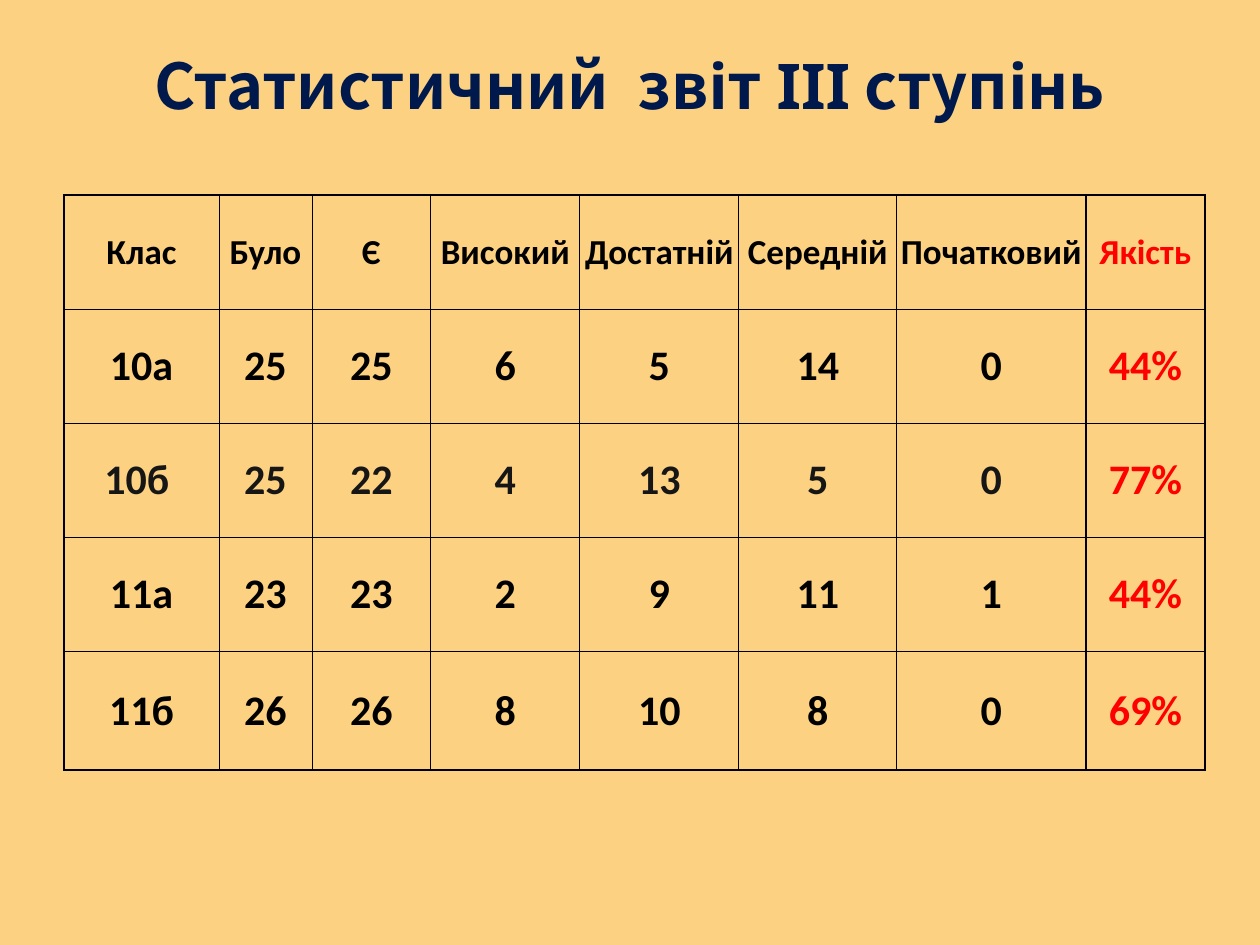
from lxml.etree import SubElement
from pptx import Presentation
from pptx.dml.color import RGBColor
from pptx.enum.text import MSO_ANCHOR, PP_ALIGN
from pptx.oxml.ns import qn
from pptx.util import Emu, Pt

COLORS = {
    "background": "FCD181",
    "title": "00194C",
    "text": "000000",
    "soft": "161616",
    "quality": "FF0000",
    "border": "000000",
}
COLUMNS = [155, 93, 119, 149, 159, 158, 189, 119]
ROWS = [114, 114, 114, 114, 119]
RESULTS = [
    ["Клас", "Було", "Є", "Високий", "Достатній", "Середній", "Початковий", "Якість"],
    ["10а", "25", "25", "6", "5", "14", "0", "44%"],
    ["10б ", "25", "22", "4", "13", "5", "0", "77%"],
    ["11а", "23", "23", "2", "9", "11", "1", "44%"],
    ["11б", "26", "26", "8", "10", "8", "0", "69%"],
]
SOFT_ROW = 2


def px(n):
    return Emu(round(n * 914400 / 126))


def write(tf, text, size=24, color="text", font="Calibri", bold=True):
    p = tf.paragraphs[0]
    p.alignment = PP_ALIGN.CENTER
    r = p.add_run()
    r.text = text
    r.font.size = Pt(size)
    r.font.name = font
    r.font.bold = bold
    r.font.color.rgb = RGBColor.from_string(COLORS[color])
    for tag in ("a:ea", "a:cs"):
        SubElement(r.font._element, qn(tag), typeface=font)


class ReportSlide:
    """Draws the elements of a report slide in one shared style."""

    def __init__(self, prs):
        self.s = prs.slides.add_slide(prs.slide_layouts[6])
        fill = self.s.background.fill
        fill.solid()
        fill.fore_color.rgb = RGBColor.from_string(COLORS["background"])

    def title(self, text, x, y, w, h):
        tf = self.s.shapes.add_textbox(px(x), px(y), px(w), px(h)).text_frame
        tf.word_wrap = True
        tf.vertical_anchor = MSO_ANCHOR.MIDDLE
        write(tf, text, size=36, color="title", font="Noto Sans CJK KR")

    def borders(self, cell, widths):
        tcPr = cell._tc.get_or_add_tcPr()
        for side, width in zip("LRTB", widths):
            ln = SubElement(tcPr, qn(f"a:ln{side}"), w=str(Pt(width)))
            fill = SubElement(ln, qn("a:solidFill"))
            SubElement(fill, qn("a:srgbClr"), val=COLORS["border"])

    def table(self, rows, x, y, widths, heights):
        sp = self.s.shapes.add_table(
            len(heights), len(widths), px(x), px(y), px(sum(widths)), px(sum(heights))
        )
        table = sp.table
        table.first_row = table.horz_banding = False
        for column, width in zip(table.columns, widths):
            column.width = px(width)
        for row, height in zip(table.rows, heights):
            row.height = px(height)
        last_row, last_col = len(heights) - 1, len(widths) - 1
        for i, row in enumerate(rows):
            for j, text in enumerate(row):
                cell = table.cell(i, j)
                heavy = (
                    j in (0, last_col),
                    j >= last_col - 1,
                    i == 0,
                    i == last_row,
                )
                self.borders(cell, [1 if edge else 0.5 for edge in heavy])
                cell.fill.background()
                cell.vertical_anchor = MSO_ANCHOR.MIDDLE
                cell.margin_left = cell.margin_right = cell.margin_top = px(1)
                cell.margin_bottom = 0
                color = "soft" if i == SOFT_ROW else "text"
                write(
                    cell.text_frame,
                    text,
                    size=24 if i else 20,
                    color="quality" if j == last_col else color,
                )


def main():
    prs = Presentation()
    prs.slide_width, prs.slide_height = px(1260), px(945)
    report = ReportSlide(prs)
    report.title("Статистичний  звіт ІІІ ступінь", 0, 32, 1260, 105)
    report.table(RESULTS, 64, 195, COLUMNS, ROWS)
    prs.save("out.pptx")


if __name__ == "__main__":
    main()
